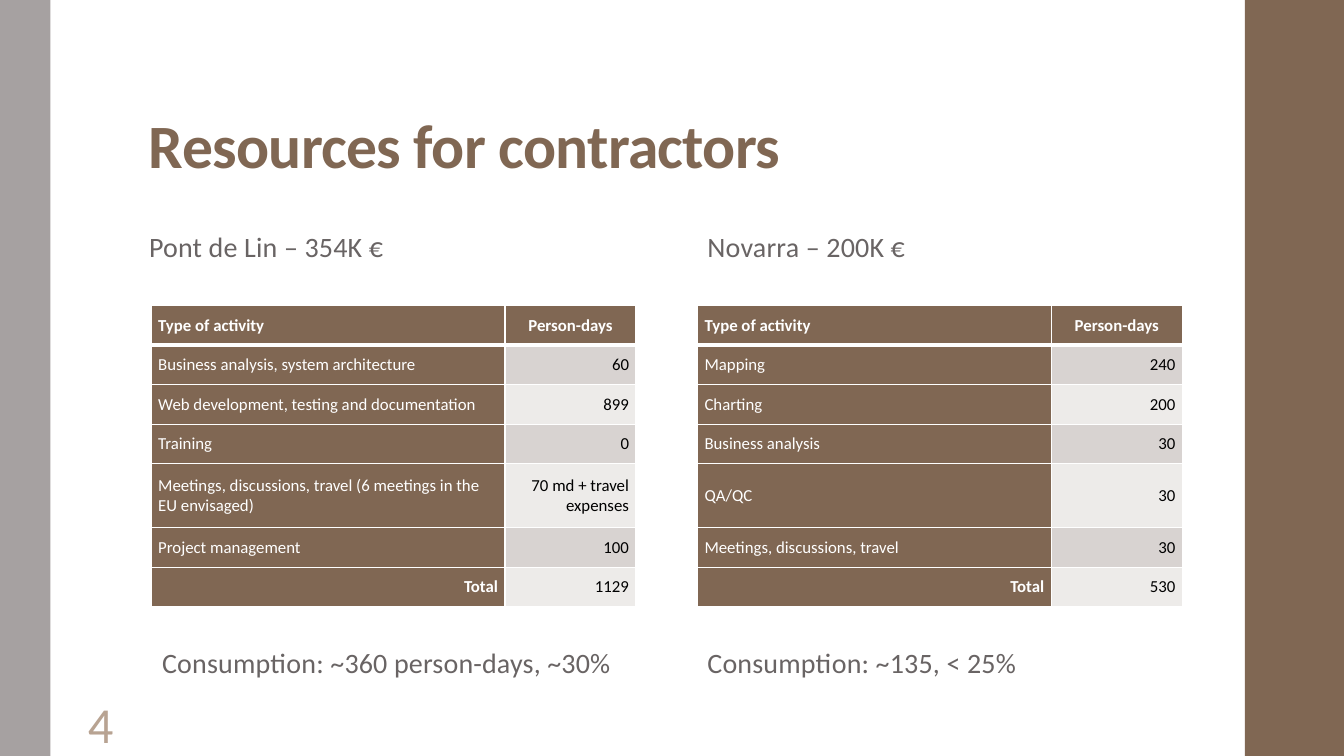
import pptx
import pptx.dml.color
import pptx.enum.shapes
import pptx.enum.text
import pptx.oxml
import pptx.oxml.ns
import pptx.util

RGBColor = pptx.dml.color.RGBColor
ALIGN = pptx.enum.text.PP_ALIGN
ANCHOR = pptx.enum.text.MSO_ANCHOR

BROWN = RGBColor(0x80, 0x67, 0x53)
TAUPE = RGBColor(0xA6, 0xA1, 0xA1)
SAND = RGBColor(0xB8, 0xA3, 0x92)
GREY = RGBColor(0x69, 0x64, 0x64)
BAND_DARK = RGBColor(0xD8, 0xD3, 0xD1)
BAND_LIGHT = RGBColor(0xED, 0xEB, 0xE9)
WHITE = RGBColor(0xFF, 0xFF, 0xFF)
BLACK = RGBColor(0, 0, 0)

# Grid of 160 columns by 90 rows; one unit is a twelfth of an inch
COLUMNS, ROWS = 160, 90
UNIT = pptx.util.Inches(1) / 12


def units(count):
    return pptx.util.Emu(round(count * UNIT))


class SlideBuilder:
    font = "Calibri"

    def __init__(self, slide):
        self.slide = slide

    def band(self, column, width, color):
        """Full-height colour band."""
        band = self.slide.shapes.add_shape(
            pptx.enum.shapes.MSO_SHAPE.RECTANGLE,
            units(column), 0, units(width), units(ROWS))
        band.shadow.inherit = False
        band.fill.solid()
        band.fill.fore_color.rgb = color
        band.line.fill.background()

    def fill_text(self, frame, words, size, color, bold=False, align=ALIGN.LEFT, spacing=0):
        frame.text = words
        paragraph = frame.paragraphs[0]
        paragraph.alignment = align
        for run in paragraph.runs:
            run.font.name = self.font
            run.font.size = pptx.util.Pt(size)
            run.font.bold = bold
            run.font.color.rgb = color
            if spacing:
                run._r.get_or_add_rPr().set("spc", str(spacing))
        return paragraph

    def text(self, box, words, size, color, anchor=ANCHOR.BOTTOM,
             margins=(0.1, 0.05, 0.1, 0.05), line_spacing=1.0, **style):
        frame = self.slide.shapes.add_textbox(*map(units, box)).text_frame
        frame.word_wrap = True
        frame.vertical_anchor = anchor
        (frame.margin_left, frame.margin_top,
         frame.margin_right, frame.margin_bottom) = map(pptx.util.Inches, margins)
        paragraph = self.fill_text(frame, words, size, color, **style)
        paragraph.line_spacing = line_spacing
        return paragraph

    def caption(self, column, row, words):
        paragraph = self.text((column, row, 62, 9.6), words, 20, GREY,
                              line_spacing=0.95, spacing=10)
        paragraph.space_after = pptx.util.Pt(2)

    def cell(self, cell, words, fill, color, bold, align, top=1, bottom=1):
        cell.vertical_anchor = ANCHOR.MIDDLE
        cell.margin_left = cell.margin_right = pptx.util.Inches(0.07)
        cell.margin_top = cell.margin_bottom = 0
        properties = cell._tc.get_or_add_tcPr()
        for side, points in (("L", 1), ("R", 1), ("T", top), ("B", bottom)):
            properties.append(pptx.oxml.parse_xml(
                f'<a:ln{side} {pptx.oxml.ns.nsdecls("a")} w="{pptx.util.Pt(points)}">'
                f'<a:solidFill><a:srgbClr val="{WHITE}"/></a:solidFill></a:ln{side}>'))
        cell.fill.solid()
        cell.fill.fore_color.rgb = fill
        self.fill_text(cell.text_frame, words, 12, color, bold, align)

    def effort_table(self, column, row, widths, heights, activities):
        """Header, activities, and a closing total row."""
        entries = [("Type of activity", "Person-days"), *activities]
        table = self.slide.shapes.add_table(
            len(entries), len(widths), units(column), units(row),
            units(sum(widths)), units(sum(heights))).table
        for table_column, width in zip(table.columns, widths):
            table_column.width = units(width)
        for table_row, height in zip(table.rows, heights):
            table_row.height = units(height)
        for index, (activity, days) in enumerate(entries):
            header, total = index == 0, index == len(entries) - 1
            edges = {"top": 3 if index == 1 else 1, "bottom": 3 if header else 1}
            self.cell(table.cell(index, 0), activity, BROWN, WHITE, header or total,
                      ALIGN.RIGHT if total else ALIGN.LEFT, **edges)
            if header:
                self.cell(table.cell(index, 1), days, BROWN, WHITE, True,
                          ALIGN.CENTER, **edges)
            else:
                self.cell(table.cell(index, 1), days,
                          BAND_DARK if index % 2 else BAND_LIGHT, BLACK, False,
                          ALIGN.RIGHT, **edges)


WEB_ACTIVITIES = [
    ("Business analysis, system architecture", "60"),
    ("Web development, testing and documentation", "899"),
    ("Training", "0"),
    ("Meetings, discussions, travel (6 meetings in the EU envisaged)",
     "70 md + travel expenses"),
    ("Project management", "100"),
    ("Total", "1129"),
]
MAPPING_ACTIVITIES = [
    ("Mapping", "240"),
    ("Charting", "200"),
    ("Business analysis", "30"),
    ("QA/QC", "30"),
    ("Meetings, discussions, travel", "30"),
    ("Total", "530"),
]
# Heading, its column, activities, table column, consumption, its column
CONTRACTORS = [
    ("Pont de Lin – 354K €", 16.56, WEB_ACTIVITIES, 18,
     "Consumption: ~360 person-days, ~30%", 18.12),
    ("Novarra – 200K €", 83.04, MAPPING_ACTIVITIES, 83.04,
     "Consumption: ~135, < 25%", 83.04),
]
TABLE_WIDTHS = [42.12, 15.6]
TABLE_HEIGHTS = [4.71] * 4 + [7.6] + [4.71] * 2


def main():
    presentation = pptx.Presentation()
    presentation.slide_width = units(COLUMNS)
    presentation.slide_height = units(ROWS)
    builder = SlideBuilder(presentation.slides.add_slide(presentation.slide_layouts[6]))

    # Side bands
    builder.band(148.2, COLUMNS - 148.2, BROWN)
    builder.band(0, 6, TAUPE)

    # Title
    builder.text((16.56, 3.84, 127.2, 18.36), "Resources for contractors", 44, BROWN,
                 margins=(0.1, 0.03, 0.1, 0.05), line_spacing=0.9,
                 bold=True, spacing=-50)

    # One heading, table and consumption line per contractor
    for heading, heading_at, activities, table_at, consumption, consumption_at in CONTRACTORS:
        builder.caption(heading_at, 22.44, heading)
        builder.effort_table(table_at, 36.4, TABLE_WIDTHS, TABLE_HEIGHTS, activities)
        builder.caption(consumption_at, 71.88, consumption)

    # Page number
    builder.text((6, 82.2, 12, 7.8), "4", 36, SAND, anchor=ANCHOR.MIDDLE,
                 margins=(0.05,) * 4, align=ALIGN.CENTER)

    presentation.save("out.pptx")


if __name__ == "__main__":
    main()
